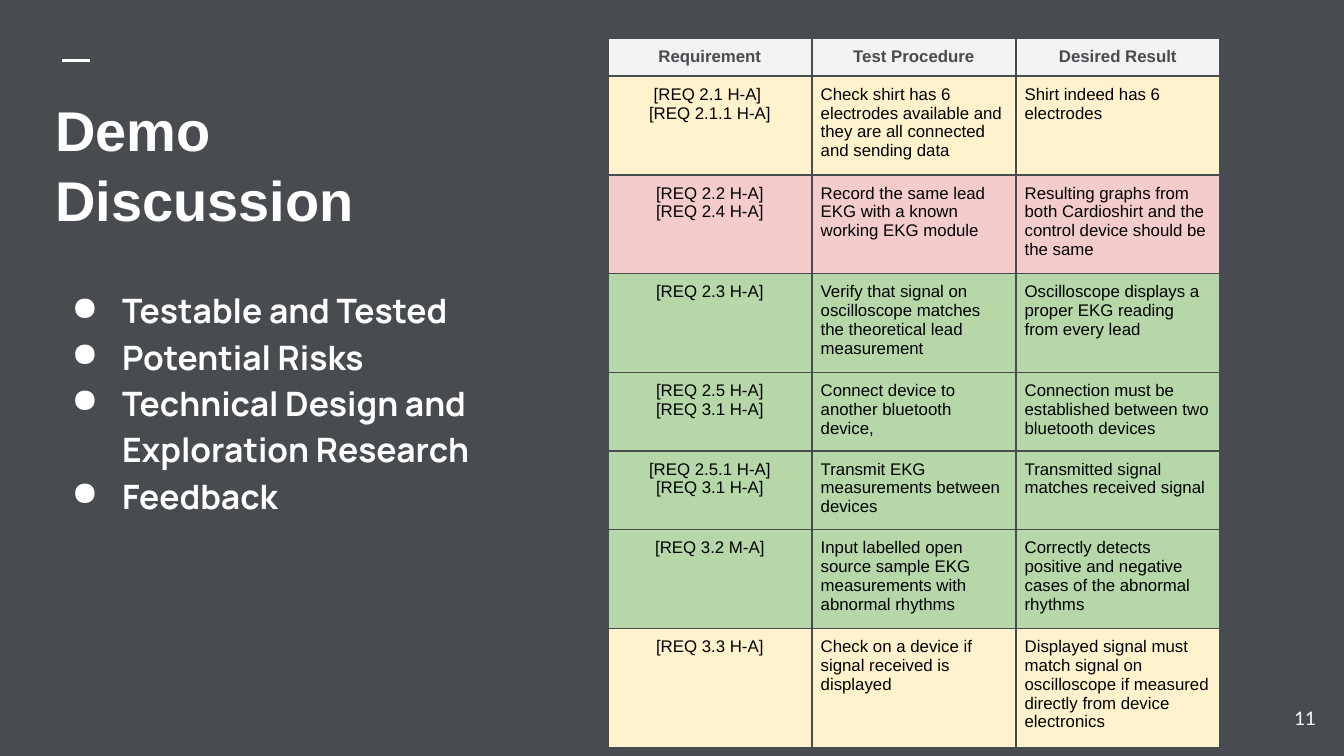
from lxml import etree
from pptx import Presentation
from pptx.dml.color import RGBColor
from pptx.enum.shapes import MSO_CONNECTOR
from pptx.enum.text import MSO_ANCHOR, PP_ALIGN
from pptx.oxml import parse_xml
from pptx.oxml.ns import nsdecls, qn
from pptx.util import Pt

BACKGROUND, WHITE, BLACK = "484B4F", "FFFFFF", "000000"
HEADER, YELLOW, RED, GREEN = "F3F3F3", "FFF2CC", "F4CCCC", "B6D7A8"


def color(hex_string):
    return RGBColor.from_string(hex_string)


def style(paragraph, name, size, hex_string, bold=False):
    font = paragraph.font
    font.name, font.size, font.bold = name, Pt(size), bold
    font.color.rgb = color(hex_string)


presentation = Presentation()
presentation.slide_width, presentation.slide_height = Pt(720), Pt(405)
slide = presentation.slides.add_slide(presentation.slide_layouts[5])
slide.background.fill.solid()
slide.background.fill.fore_color.rgb = color(BACKGROUND)

# Accent line
accent = slide.shapes.add_connector(MSO_CONNECTOR.STRAIGHT, Pt(33.5), Pt(32.4), Pt(48), Pt(32.4))
accent.line.color.rgb = color(WHITE)
accent.line.width = Pt(1.5)
etree.SubElement(accent._element.spPr, qn("a:effectLst"))

# Title
title = slide.shapes.title
title.left, title.top, title.width, title.height = Pt(22.3), Pt(40.3), Pt(257), Pt(53.3)
frame = title.text_frame
frame.text = "Demo Discussion"
frame.word_wrap = True
frame.vertical_anchor = MSO_ANCHOR.TOP
frame.margin_left = frame.margin_right = frame.margin_bottom = Pt(7.2)
frame.margin_top = Pt(9.6)
paragraph = frame.paragraphs[0]
paragraph.alignment = PP_ALIGN.LEFT
paragraph.line_spacing = 1.04
style(paragraph, "Arial", 30, WHITE, bold=True)

# Topics
topics = ["Testable and Tested", "Potential Risks",
          "Technical Design and Exploration Research", "Feedback"]
topic_box = slide.shapes.add_textbox(Pt(22.3), Pt(34.6), Pt(303), Pt(359.3))
frame = topic_box.text_frame
frame.text = "\n".join(topics)
frame.word_wrap = True
frame.vertical_anchor = MSO_ANCHOR.MIDDLE
frame.margin_left = frame.margin_right = frame.margin_top = frame.margin_bottom = Pt(7.2)
for paragraph in frame.paragraphs:
    paragraph.line_spacing = 1.15
    properties = paragraph._p.get_or_add_pPr()
    properties.set("marL", str(Pt(36)))
    properties.set("indent", str(Pt(-27)))
    properties.append(parse_xml(
        f'<a:buClr {nsdecls("a")}><a:srgbClr val="{WHITE}"/></a:buClr>'))
    properties.append(parse_xml(f'<a:buChar {nsdecls("a")} char="●"/>'))
    style(paragraph, "Manrope", 18, WHITE, bold=True)

# Slide number
number_box = slide.shapes.add_textbox(Pt(668.9), Pt(369.4), Pt(43.2), Pt(31))
frame = number_box.text_frame
frame.text = "11"
frame.word_wrap = True
frame.vertical_anchor = MSO_ANCHOR.MIDDLE
frame.margin_left = frame.margin_right = frame.margin_top = frame.margin_bottom = Pt(7.2)
frame.paragraphs[0].alignment = PP_ALIGN.RIGHT
style(frame.paragraphs[0], "Lato", 10, WHITE)

# Test table: fill, lines of text in the tallest cell, cell texts
rows = [
    (HEADER, 1, "Requirement", "Test Procedure", "Desired Result"),
    (YELLOW, 4, "[REQ 2.1 H-A] \n[REQ 2.1.1 H-A]",
     "Check shirt has 6 electrodes available and they are all connected and sending data",
     "Shirt indeed has 6 electrodes"),
    (RED, 4, "[REQ 2.2 H-A]\n[REQ 2.4 H-A]",
     "Record the same lead EKG with a known working EKG module",
     "Resulting graphs from both Cardioshirt and the control device should be the same"),
    (GREEN, 4, "[REQ 2.3 H-A]",
     "Verify that signal on oscilloscope matches the theoretical lead measurement",
     "Oscilloscope displays a proper EKG reading from every lead"),
    (GREEN, 3, "[REQ 2.5 H-A]\n[REQ 3.1 H-A]",
     "Connect device to another bluetooth device,",
     "Connection must be established between two bluetooth devices"),
    (GREEN, 3, "[REQ 2.5.1 H-A]\n[REQ 3.1 H-A]",
     "Transmit EKG measurements between devices",
     "Transmitted signal matches received signal"),
    (GREEN, 4, "[REQ 3.2 M-A]",
     "Input labelled open source sample EKG measurements with abnormal rhythms",
     "Correctly detects positive and negative cases of the abnormal rhythms"),
    (YELLOW, 5, "[REQ 3.3 H-A]",
     "Check on a device if signal received is displayed",
     "Displayed signal must match signal on oscilloscope if measured directly "
     "from device electronics"),
]
LINE_HEIGHT, CELL_MARGIN, COLUMN_WIDTH = 10.2, 4.8, 109.3
heights = [LINE_HEIGHT * lines + 2 * CELL_MARGIN for _, lines, *_ in rows]
table = slide.shapes.add_table(len(rows), 3, Pt(325.6), Pt(20.3),
                               Pt(3 * COLUMN_WIDTH), Pt(sum(heights))).table
for column in table.columns:
    column.width = Pt(COLUMN_WIDTH)
for row_index, (fill, _, *texts) in enumerate(rows):
    table.rows[row_index].height = Pt(heights[row_index])
    is_header = row_index == 0
    for column_index, text in enumerate(texts):
        cell = table.cell(row_index, column_index)
        cell.text = text
        cell.margin_left = cell.margin_right = Pt(CELL_MARGIN)
        cell.margin_top = cell.margin_bottom = Pt(CELL_MARGIN)
        cell.vertical_anchor = MSO_ANCHOR.TOP
        for paragraph in cell.text_frame.paragraphs:
            centered = is_header or column_index == 0
            paragraph.alignment = PP_ALIGN.CENTER if centered else PP_ALIGN.LEFT
            style(paragraph, "Arial", 9, BACKGROUND if is_header else BLACK, bold=is_header)
        for side in ("lnL", "lnR", "lnT", "lnB"):
            cell._tc.get_or_add_tcPr().append(parse_xml(
                f'<a:{side} {nsdecls("a")} w="{Pt(1)}"><a:solidFill>'
                f'<a:srgbClr val="{BACKGROUND}"/></a:solidFill></a:{side}>'))
        cell.fill.solid()
        cell.fill.fore_color.rgb = color(fill)

presentation.save("out.pptx")
